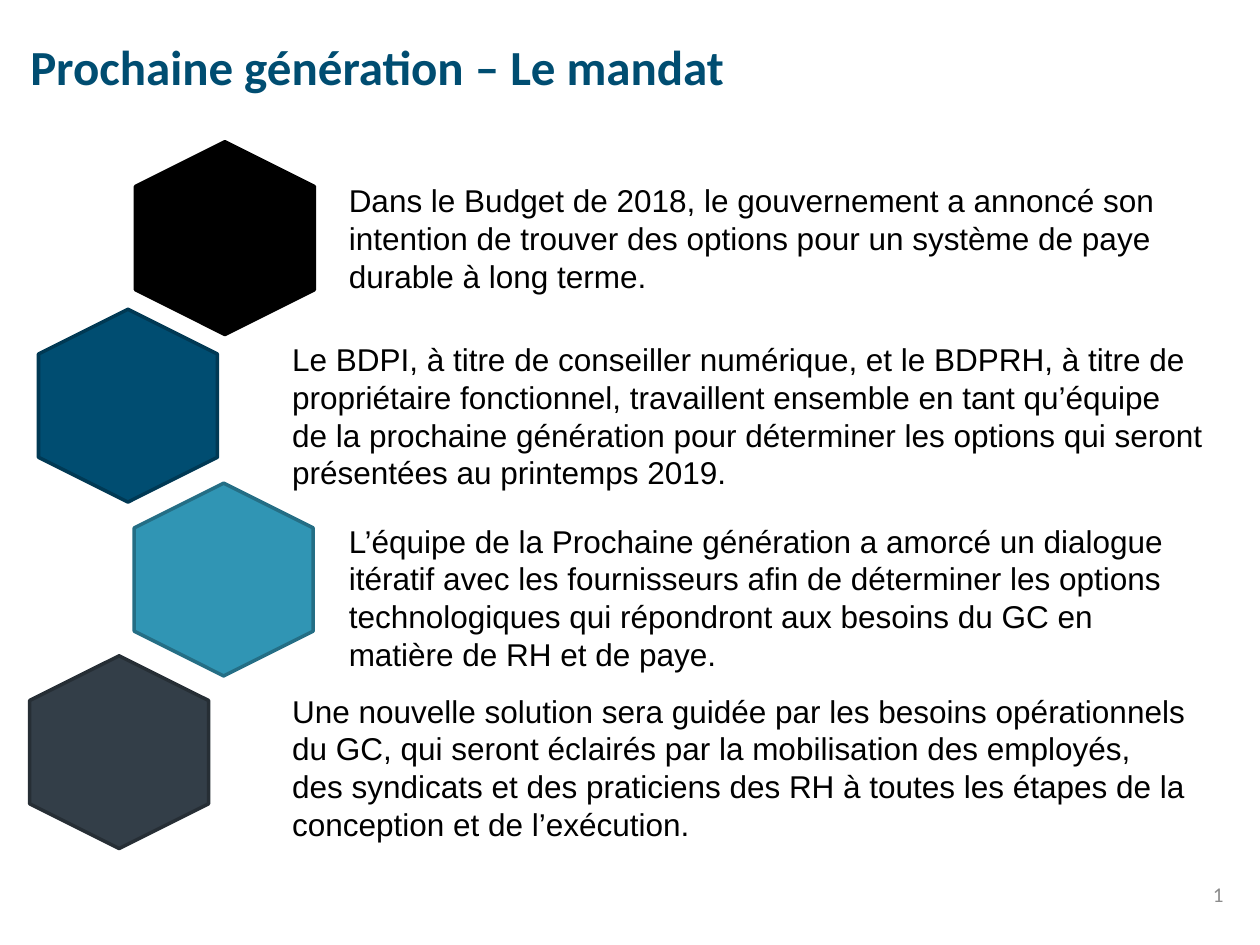
from lxml.etree import SubElement
from pptx import Presentation
from pptx.dml.color import RGBColor
from pptx.enum.shapes import MSO_SHAPE
from pptx.enum.text import MSO_ANCHOR, MSO_AUTO_SIZE, PP_ALIGN
from pptx.oxml.ns import qn
from pptx.util import Inches, Pt

BLACK = RGBColor(0x00, 0x00, 0x00)
NAVY = RGBColor(0x00, 0x4D, 0x71)
NAVY_EDGE = RGBColor(0x00, 0x39, 0x54)
TEAL = RGBColor(0x30, 0x95, 0xB4)
TEAL_EDGE = RGBColor(0x24, 0x6E, 0x85)
SLATE = RGBColor(0x33, 0x3E, 0x48)
SLATE_EDGE = RGBColor(0x26, 0x2E, 0x35)
GRAY = RGBColor(0x8C, 0x8C, 0x8C)

HEX_LENGTH, HEX_WIDTH = 1.53, 1.42

# Hexagon (left, top, fill, edge), statement box (left, top, width, height), statement
MANDATE = [
    ((1.02, 1.18, BLACK, BLACK), (2.67, 1.39, 6.97, 1),
     "Dans le Budget de 2018, le gouvernement a annoncé son intention de trouver "
     "des options pour un système de paye durable à long terme."),
    ((0.25, 2.51, NAVY, NAVY_EDGE), (2.22, 2.65, 7.43, 1.3),
     "Le BDPI, à titre de conseiller numérique, et le BDPRH, à titre de propriétaire "
     "fonctionnel, travaillent ensemble en tant qu’équipe de la prochaine génération "
     "pour déterminer les options qui seront présentées au printemps 2019."),
    ((1.01, 3.89, TEAL, TEAL_EDGE), (2.67, 4.09, 6.87, 1.3),
     "L’équipe de la Prochaine génération a amorcé un dialogue itératif avec les "
     "fournisseurs afin de déterminer les options technologiques qui répondront aux "
     "besoins du GC en matière de RH et de paye."),
    ((0.18, 5.26, SLATE, SLATE_EDGE), (2.22, 5.44, 7.32, 1.3),
     "Une nouvelle solution sera guidée par les besoins opérationnels du GC, qui seront "
     "éclairés par la mobilisation des employés, des syndicats et des praticiens des RH "
     "à toutes les étapes de la conception et de l’exécution."),
]


def style(paragraph, font_name, size, color, bold=False):
    font = paragraph.font
    font.name, font.size, font.bold = font_name, Pt(size), bold
    font.color.rgb = color


def place_title(slide, left, top, width, height):
    title = slide.shapes.title
    title.left, title.top = Inches(left), Inches(top)
    title.width, title.height = Inches(width), Inches(height)
    frame = title.text_frame
    frame.margin_left = frame.margin_right = frame.margin_top = frame.margin_bottom = 0
    frame.vertical_anchor = MSO_ANCHOR.TOP
    frame.auto_size = MSO_AUTO_SIZE.NONE
    frame.text = "Prochaine génération – Le mandat"
    heading = frame.paragraphs[0]
    heading.alignment = PP_ALIGN.LEFT
    style(heading, "Calibri", 28, NAVY, bold=True)


def add_hexagon(slide, left, top, fill, edge):
    hexagon = slide.shapes.add_shape(
        MSO_SHAPE.HEXAGON, Inches(left), Inches(top), Inches(HEX_LENGTH), Inches(HEX_WIDTH))
    hexagon.rotation = 90
    hexagon.shadow.inherit = False
    hexagon.fill.solid()
    hexagon.fill.fore_color.rgb = fill
    hexagon.line.color.rgb = edge
    hexagon.line.width = Pt(2)


def add_text_frame(slide, left, top, width, height):
    box = slide.shapes.add_textbox(Inches(left), Inches(top), Inches(width), Inches(height))
    box.text_frame.word_wrap = True
    return box.text_frame


def add_statement(slide, box, statement):
    frame = add_text_frame(slide, *box)
    frame.auto_size = MSO_AUTO_SIZE.SHAPE_TO_FIT_TEXT
    frame.text = statement
    style(frame.paragraphs[0], "Arial", 18, BLACK)


def add_page_number(slide, left, top, width, height):
    frame = add_text_frame(slide, left, top, width, height)
    frame.vertical_anchor = MSO_ANCHOR.MIDDLE
    number = frame.paragraphs[0]
    # Live slide-number field
    field = SubElement(number._p, qn("a:fld"), type="slidenum",
                       id="{B6F15528-21DE-4FAA-801E-634DDDAF4B2B}")
    SubElement(field, qn("a:rPr"), lang="fr-CA")
    SubElement(field, qn("a:t")).text = "1"
    number.alignment = PP_ALIGN.RIGHT
    style(number, "Calibri", 12, GRAY)


def main():
    presentation = Presentation()
    presentation.slide_width, presentation.slide_height = Inches(10), Inches(7.5)
    slide = presentation.slides.add_slide(presentation.slide_layouts[5])

    place_title(slide, 0.24, 0.29, 5.94, 0.53)
    for hexagon, box, statement in MANDATE:
        add_hexagon(slide, *hexagon)
        add_statement(slide, box, statement)
    add_page_number(slide, 7.48, 6.9, 2.33, 0.4)

    presentation.save("out.pptx")


if __name__ == "__main__":
    main()
